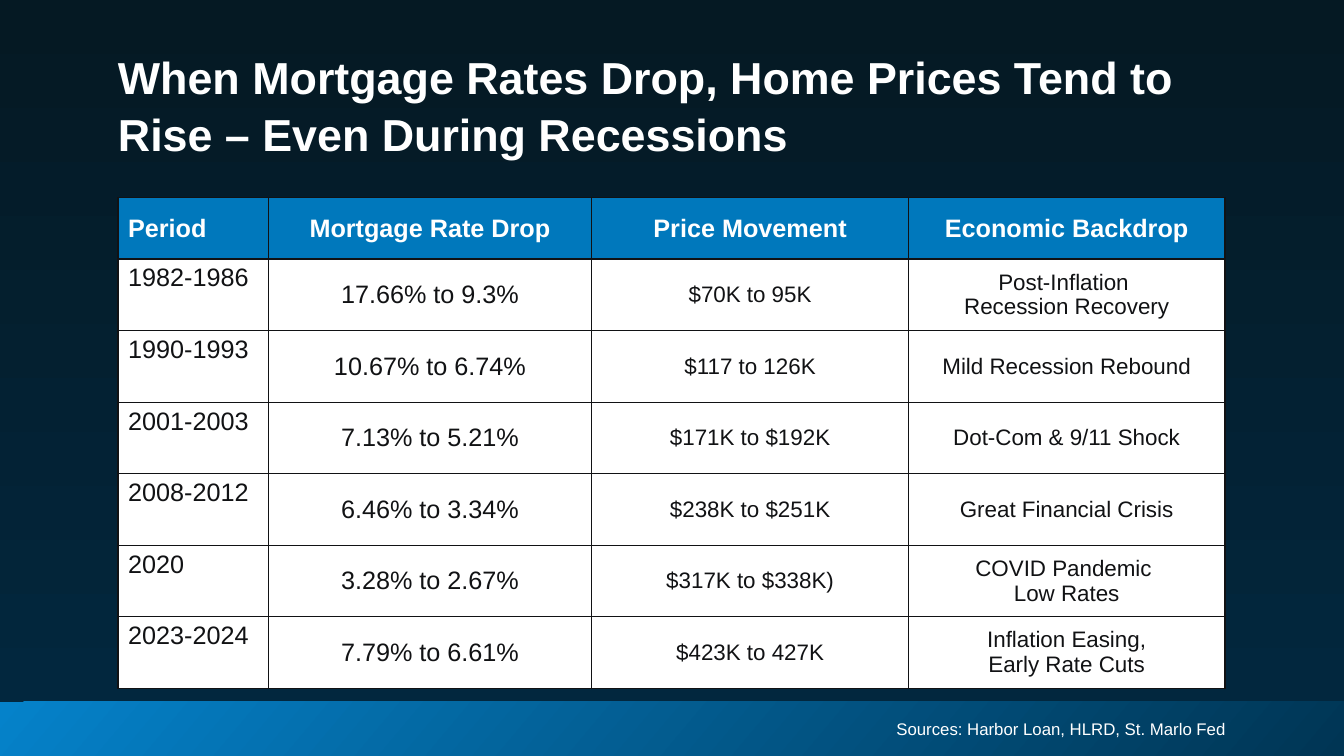
from dataclasses import dataclass

from lxml.etree import SubElement
from pptx import Presentation
from pptx.dml.color import RGBColor
from pptx.enum.shapes import MSO_SHAPE
from pptx.enum.text import MSO_ANCHOR, PP_ALIGN
from pptx.oxml.ns import qn
from pptx.util import Inches, Pt


@dataclass(frozen=True)
class Theme:
    font: str = "Arial"
    white: str = "FFFFFF"
    ink: str = "111214"
    header: str = "0078BC"
    background: tuple = ("051923", "022840")
    band: tuple = ("0582CA", "003554")
    title_size: int = 32
    table_size: int = 18
    detail_size: int = 16
    source_size: int = 12
    border_width: int = 1


THEME = Theme()
SLIDE_WIDTH, SLIDE_HEIGHT = 13.33, 7.5
TITLE = "When Mortgage Rates Drop, Home Prices Tend to Rise – Even During Recessions"
SOURCES = "Sources: Harbor Loan, HLRD, St. Marlo Fed"
COLUMN_WIDTHS = (1.49, 3.21, 3.14, 3.14)
HEADER_HEIGHT = 0.61
HEADINGS = ("Period", "Mortgage Rate Drop", "Price Movement", "Economic Backdrop")
# \v breaks a line, \n starts a paragraph
PERIODS = (
    ("1982-1986", "17.66% to 9.3%", "$70K to 95K", "Post-Inflation \vRecession Recovery"),
    ("1990-1993", "10.67% to 6.74%", "$117 to 126K", "Mild Recession Rebound"),
    ("2001-2003", "7.13% to 5.21%", "$171K to $192K", "Dot-Com & 9/11 Shock"),
    ("2008-2012", "6.46% to 3.34%", "$238K to $251K", "Great Financial Crisis"),
    ("2020", "3.28% to 2.67%", "$317K to $338K)", "COVID Pandemic \vLow Rates"),
    ("2023-2024", "7.79% to 6.61%", "$423K to 427K", "Inflation Easing,\nEarly Rate Cuts"),
)


def fill_gradient(fill, colors, clockwise_angle):
    fill.gradient()
    fill.gradient_angle = 360 - clockwise_angle
    for stop, color in zip(fill.gradient_stops, colors):
        stop.color.rgb = RGBColor.from_string(color)


def write(frame, text, size, color, bold=False, align=PP_ALIGN.LEFT, spacing=None):
    frame.text = text
    for paragraph in frame.paragraphs:
        paragraph.alignment = align
        paragraph.line_spacing = spacing
        for run in paragraph.runs:
            run.font.name = THEME.font
            run.font.size = Pt(size)
            run.font.bold = bold
            run.font.color.rgb = RGBColor.from_string(color)


def add_text(slide, box, margin, text, size, **style):
    """Place white text in a box with the given top and bottom margin."""
    frame = slide.shapes.add_textbox(*map(Inches, box)).text_frame
    frame.word_wrap = True
    frame.margin_left = frame.margin_right = 0
    frame.margin_top = frame.margin_bottom = Inches(margin)
    write(frame, text, size, THEME.white, **style)


def add_band(slide, box):
    band = slide.shapes.add_shape(MSO_SHAPE.RECTANGLE, *map(Inches, box))
    band.shadow.inherit = False
    band.line.fill.background()
    fill_gradient(band.fill, THEME.band, 40)


def add_borders(cell):
    properties = cell._tc.get_or_add_tcPr()
    for index, side in enumerate(("lnL", "lnR", "lnT", "lnB")):
        line = SubElement(properties, qn(f"a:{side}"), w=str(Pt(THEME.border_width)))
        solid = SubElement(line, qn("a:solidFill"))
        SubElement(solid, qn("a:srgbClr"), val=THEME.ink)
        properties.remove(line)
        properties.insert(index, line)


def add_rate_table(slide, box):
    left, top, width, height = box
    rows = (HEADINGS, *PERIODS)
    table = slide.shapes.add_table(
        len(rows), len(HEADINGS), Inches(left), Inches(top), Inches(width), Inches(height)
    ).table
    for column, column_width in zip(table.columns, COLUMN_WIDTHS):
        column.width = Inches(column_width)
    period_height = (height - HEADER_HEIGHT) / len(PERIODS)
    for r, texts in enumerate(rows):
        is_header = r == 0
        table.rows[r].height = Inches(HEADER_HEIGHT if is_header else period_height)
        for c, text in enumerate(texts):
            cell = table.cell(r, c)
            cell.fill.solid()
            cell.fill.fore_color.rgb = RGBColor.from_string(
                THEME.header if is_header else THEME.white
            )
            add_borders(cell)
            is_period = c == 0 and not is_header
            cell.vertical_anchor = MSO_ANCHOR.TOP if is_period else MSO_ANCHOR.MIDDLE
            write(
                cell.text_frame,
                text,
                THEME.table_size if is_header or c < 2 else THEME.detail_size,
                THEME.white if is_header else THEME.ink,
                bold=is_header,
                align=PP_ALIGN.LEFT if c == 0 else PP_ALIGN.CENTER,
            )


def build_rates_slide(presentation):
    slide = presentation.slides.add_slide(presentation.slide_layouts[6])
    fill_gradient(slide.background.fill, THEME.background, 90)
    add_band(slide, (0, 6.96, SLIDE_WIDTH, 0.54))
    add_text(slide, (1.17, 0.47, 11, 0.59), 0, TITLE, THEME.title_size,
             bold=True, spacing=1.05)
    add_rate_table(slide, (1.17, 1.96, sum(COLUMN_WIDTHS), 4.87))
    add_text(slide, (1.18, 7.12, 10.98, 0.28), 0.05, SOURCES, THEME.source_size,
             align=PP_ALIGN.RIGHT, spacing=0.8)


def main():
    presentation = Presentation()
    presentation.slide_width = Inches(SLIDE_WIDTH)
    presentation.slide_height = Inches(SLIDE_HEIGHT)
    build_rates_slide(presentation)
    presentation.save("out.pptx")


if __name__ == "__main__":
    main()
